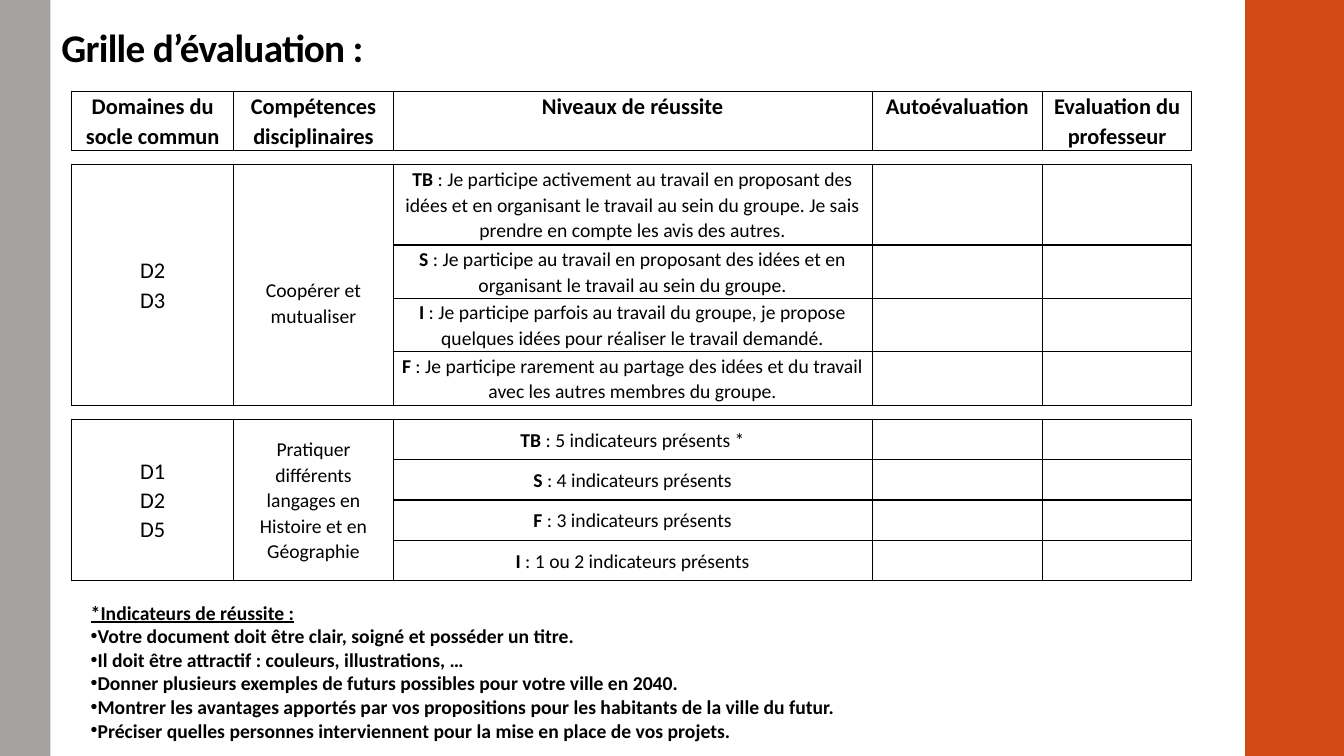
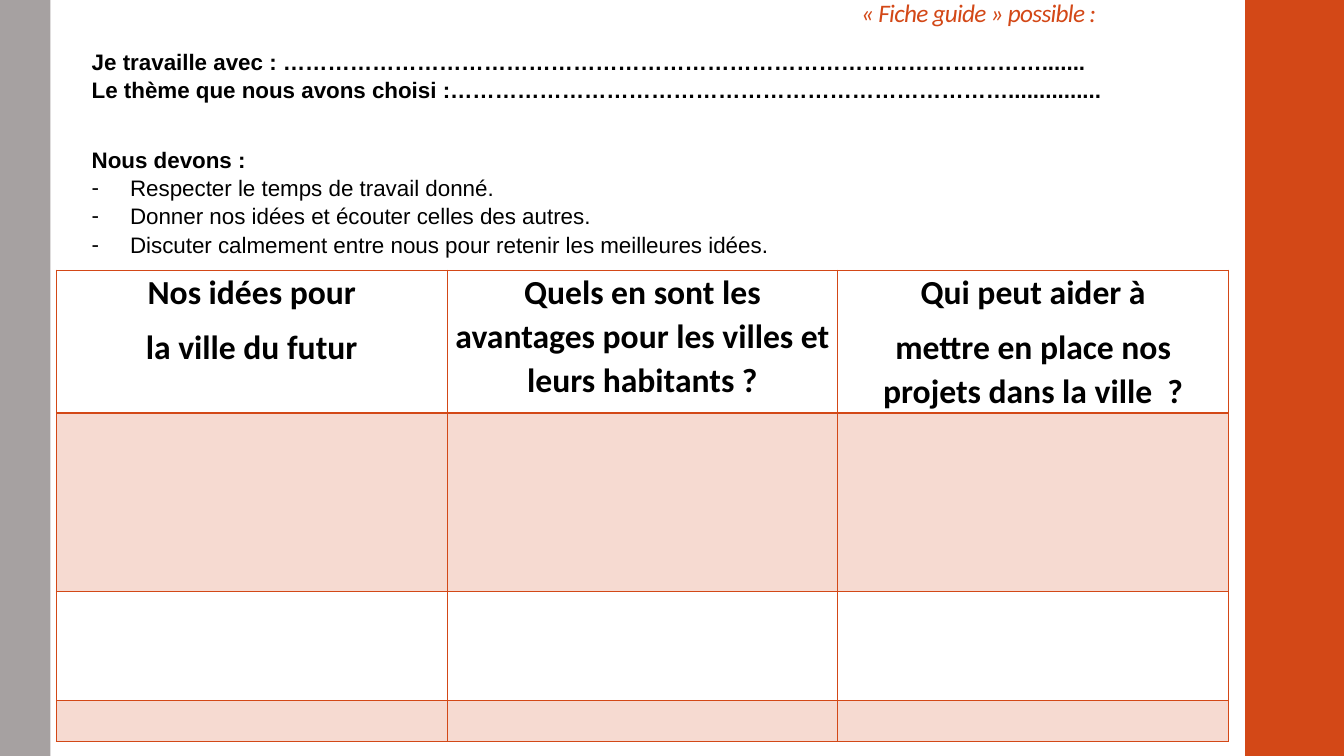
from dataclasses import dataclass

from lxml.etree import SubElement
from pptx import Presentation
from pptx.dml.color import RGBColor
from pptx.enum.shapes import MSO_SHAPE as Shape
from pptx.enum.text import MSO_ANCHOR as Anchor, MSO_AUTO_SIZE as AutoSize, PP_ALIGN as Align
from pptx.oxml.ns import qn
from pptx.util import Inches, Pt


@dataclass(frozen=True)
class Theme:
    accent: str = "D34817"
    grey: str = "A6A1A1"
    tint: str = "F6DAD1"
    ink: str = "000000"
    sans: str = "Calibri"
    guide: str = "Arial"
    title: int = 28
    subtitle: int = 18
    column: int = 24
    large: int = 16
    small: int = 14
    spacer: int = 4
    leading: float = 1.07


THEME = Theme()
WIDTH, HEIGHT = 13.33, 7.5
BANDS = [(12.35, 1, THEME.accent), (0, 0.5, THEME.grey)]

GRID_AT = (0.71, 0.91)
GRID_COLUMNS = [1.61, 1.58, 4.75, 1.69, 1.48]
HEADER_HEIGHT, SPACER_HEIGHT = 0.58, 0.14
GRID_HEADERS = [
    "Domaines du socle commun",
    "Compétences disciplinaires",
    "Niveaux de réussite",
    "Autoévaluation",
    "Evaluation du professeur",
]
SKILLS = [
    {
        "domains": ["D2", "D3"],
        "skill": "Coopérer et mutualiser",
        "drop": 0.36,
        "heights": [0.8, 0.53, 0.53, 0.53],
        "levels": [
            ("TB", " : Je participe activement au travail en proposant des idées et en organisant "
                   "le travail au sein du groupe. Je sais prendre en compte les avis des autres."),
            ("S", " : Je participe au travail en proposant des idées et en organisant le travail "
                  "au sein du groupe."),
            ("I", " : Je participe parfois au travail du groupe, je propose quelques idées pour "
                  "réaliser le travail demandé."),
            ("F", " : Je participe rarement au partage des idées et du travail avec les autres "
                  "membres du groupe."),
        ],
    },
    {
        "domains": ["D1", "D2", "D5"],
        "skill": "Pratiquer différents langages en Histoire et en Géographie",
        "drop": 0,
        "heights": [0.4] * 4,
        "levels": [
            ("TB", " : 5 indicateurs présents *"),
            ("S", " : 4 indicateurs présents"),
            ("F", " : 3 indicateurs présents"),
            ("I", " : 1 ou 2 indicateurs présents"),
        ],
    },
]
INDICATORS_HEADING = "*Indicateurs de réussite :"
INDICATORS = [
    "Votre document doit être clair, soigné et posséder un titre.",
    "Il doit être attractif : couleurs, illustrations, …",
    "Donner plusieurs exemples de futurs possibles pour votre ville en 2040.",
    "Montrer les avantages apportés par vos propositions pour les habitants de la ville du futur.",
    "Préciser quelles personnes interviennent pour la mise en place de vos projets.",
]

GUIDE_BLANKS = [
    "Je travaille avec : ………………………………………………………………………………………….......",
    "Le thème que nous avons choisi :…………………………………………………………………...............",
]
GUIDE_HEADING = "Nous devons :"
GUIDE_RULES = [
    "Respecter le temps de travail donné.",
    "Donner nos idées et écouter celles des autres.",
    "Discuter calmement entre nous pour retenir les meilleures idées.",
]
IDEAS_AT = (0.56, 2.68)
IDEAS_COLUMNS = [3.875] * 3
IDEAS_ROWS = [1.41, 1.77, 1.08, 0.41]
IDEAS_HEADERS = [
    ["Nos idées pour", "la ville du futur"],
    ["Quels en sont les avantages pour les villes et leurs habitants ?"],
    ["Qui peut aider à", "mettre en place nos projets dans la ville  ?"],
]


def rgb(color):
    return RGBColor.from_string(color)


def place(shape, left, top, width, height):
    shape.left, shape.top = Inches(left), Inches(top)
    shape.width, shape.height = Inches(width), Inches(height)


def style(para, size, bold=None, color=THEME.ink, name=THEME.sans):
    font = para.font
    font.size, font.bold, font.name = Pt(size), bold, name
    font.color.rgb = rgb(color)
    return font


def add_bands(deck, slide):
    tree = deck.slide_master.shapes.element
    for left, width, color in BANDS:
        band = slide.shapes.add_shape(
            Shape.RECTANGLE, Inches(left), 0, Inches(width), Inches(HEIGHT))
        band.shadow.inherit = False
        band.fill.solid()
        band.fill.fore_color.rgb = rgb(color)
        band.line.fill.background()
        tree.insert(2, band.element)


def set_title(slide, text, at, size, color, align, bold, italic):
    title = slide.shapes.title
    place(title, *at)
    frame = title.text_frame
    frame.text = text
    frame.auto_size = AutoSize.NONE
    frame.vertical_anchor = Anchor.BOTTOM
    frame.margin_top, frame.margin_bottom = Inches(0.03), Inches(0.05)
    para = frame.paragraphs[0]
    para.alignment, para.line_spacing = align, 0.9
    style(para, size, bold, color).italic = italic
    for props in title.element.iter(qn("a:defRPr")):
        props.set("spc", "-50")


def set_body(slide, at, anchor):
    body = slide.placeholders[1]
    place(body, *at)
    frame = body.text_frame
    frame.auto_size, frame.vertical_anchor = AutoSize.NONE, anchor
    return frame


def add_line(frame, text, size, bold, name, bullet=None, indent=0, before=0, leading=1):
    para = frame.paragraphs[0] if not frame.text else frame.add_paragraph()
    para.text = text
    para.alignment, para.line_spacing = Align.LEFT, leading
    para.space_before = Pt(before)
    props = para._p.get_or_add_pPr()
    props.set("marL", str(Inches(indent)))
    props.set("indent", str(-Inches(indent)))
    if bullet:
        SubElement(props, qn("a:buChar"), char=bullet)
    else:
        SubElement(props, qn("a:buNone"))
    return style(para, size, bold, name=name)


def set_borders(cell, color, **widths):
    props = cell._tc.get_or_add_tcPr()
    for side in "LRTB":
        width = widths.get(side, 1)
        line = SubElement(props, qn(f"a:ln{side}"), w=str(Pt(width)))
        if width:
            fill = SubElement(line, qn("a:solidFill"))
            SubElement(fill, qn("a:srgbClr"), val=color)
        else:
            SubElement(line, qn("a:noFill"))


def add_table(slide, at, columns, rows, margin):
    left, top = at
    table = slide.shapes.add_table(
        len(rows), len(columns), Inches(left), Inches(top),
        Inches(sum(columns)), Inches(sum(rows))).table
    table.first_row = table.horz_banding = False
    for column, width in zip(table.columns, columns):
        column.width = Inches(width)
    for row, height in zip(table.rows, rows):
        row.height = Inches(height)
    for cell in table.iter_cells():
        cell.margin_left = cell.margin_right = Inches(margin)
        cell.margin_top = cell.margin_bottom = 0
        cell.fill.background()
        style(cell.text_frame.paragraphs[0], THEME.spacer)
    return table


def fill_cell(cell, lines, size, bold=False, anchor=Anchor.MIDDLE, after=0):
    cell.vertical_anchor = anchor
    frame = cell.text_frame
    for index, line in enumerate(lines):
        para = frame.add_paragraph() if index else frame.paragraphs[0]
        mark, text = line if isinstance(line, tuple) else ("", line)
        if mark:
            span = para.add_run()
            span.text, span.font.bold = mark, True
        para.add_run().text = text
        para.alignment, para.line_spacing = Align.CENTER, THEME.leading
        para.space_after = Pt(after)
        style(para, size, bold)


def frame_cell(cell, color, fill=None, **widths):
    props = cell._tc.get_or_add_tcPr()
    for child in list(props):
        props.remove(child)
    set_borders(cell, color, **widths)
    if fill:
        cell.fill.solid()
        cell.fill.fore_color.rgb = rgb(fill)
    else:
        cell.fill.background()


def build_grid(slide):
    rows = [HEADER_HEIGHT]
    for skill in SKILLS:
        rows += [SPACER_HEIGHT, *skill["heights"]]
    table = add_table(slide, GRID_AT, GRID_COLUMNS, rows, 0.05)
    last = len(GRID_COLUMNS) - 1
    for row, height in enumerate(rows):
        sides = {"L": 0, "R": 0} if height == SPACER_HEIGHT else {}
        for column in range(last + 1):
            frame_cell(table.cell(row, column), THEME.ink, **sides)
    for column, text in enumerate(GRID_HEADERS):
        fill_cell(table.cell(0, column), [text], THEME.large, True, Anchor.TOP)
    row = 1
    for skill in SKILLS:
        table.cell(row, 0).merge(table.cell(row, last))
        first, end = row + 1, row + len(skill["levels"])
        for column in (0, 1):
            table.cell(first, column).merge(table.cell(end, column))
        fill_cell(table.cell(first, 0), skill["domains"], THEME.large)
        fill_cell(table.cell(first, 1), [skill["skill"]], THEME.small)
        table.cell(first, 1).margin_top = Inches(skill["drop"])
        for offset, level in enumerate(skill["levels"]):
            fill_cell(table.cell(first + offset, 2), [level], THEME.small)
        row = end + 1


def build_ideas(slide):
    table = add_table(slide, IDEAS_AT, IDEAS_COLUMNS, IDEAS_ROWS, 0.07)
    for row in range(len(IDEAS_ROWS)):
        for column, lines in enumerate(IDEAS_HEADERS):
            cell = table.cell(row, column)
            frame_cell(cell, THEME.accent, THEME.tint if row % 2 else None,
                       T=2 if row == 1 else 1, B=1 if row else 2)
            if row == 0:
                fill_cell(cell, lines, THEME.column, True, Anchor.TOP, after=8)


def build_evaluation(slide):
    set_title(slide, "Grille d’évaluation :", (0.51, 0, 11.68, 0.75),
              THEME.title, THEME.ink, Align.LEFT, True, False)
    build_grid(slide)
    frame = set_body(slide, (0.8, 5.91, 11.47, 1.51), Anchor.TOP)
    add_line(frame, INDICATORS_HEADING, THEME.small, True, THEME.sans).underline = True
    for text in INDICATORS:
        add_line(frame, text, THEME.small, True, THEME.sans, "•")


def build_guide(slide):
    set_title(slide, "« Fiche guide » possible : ", (0.42, 0, 10.6, 0.33),
              THEME.subtitle, THEME.accent, Align.RIGHT, False, True)
    build_ideas(slide)
    frame = set_body(slide, (0.81, 0.45, 11.38, 2.12), Anchor.MIDDLE)
    look = {"size": THEME.large, "name": THEME.guide, "leading": 1.06}
    for text in GUIDE_BLANKS:
        add_line(frame, text, bold=True, **look)
    add_line(frame, GUIDE_HEADING, bold=True, before=29, **look)
    for text in GUIDE_RULES:
        add_line(frame, text, bold=False, bullet="-", indent=0.38, **look)


def main():
    deck = Presentation()
    deck.slide_width, deck.slide_height = Inches(WIDTH), Inches(HEIGHT)
    layout = deck.slide_layouts[1]
    evaluation, guide = (deck.slides.add_slide(layout) for _ in range(2))
    add_bands(deck, evaluation)
    build_evaluation(evaluation)
    build_guide(guide)
    deck.save("out.pptx")


if __name__ == "__main__":
    main()
